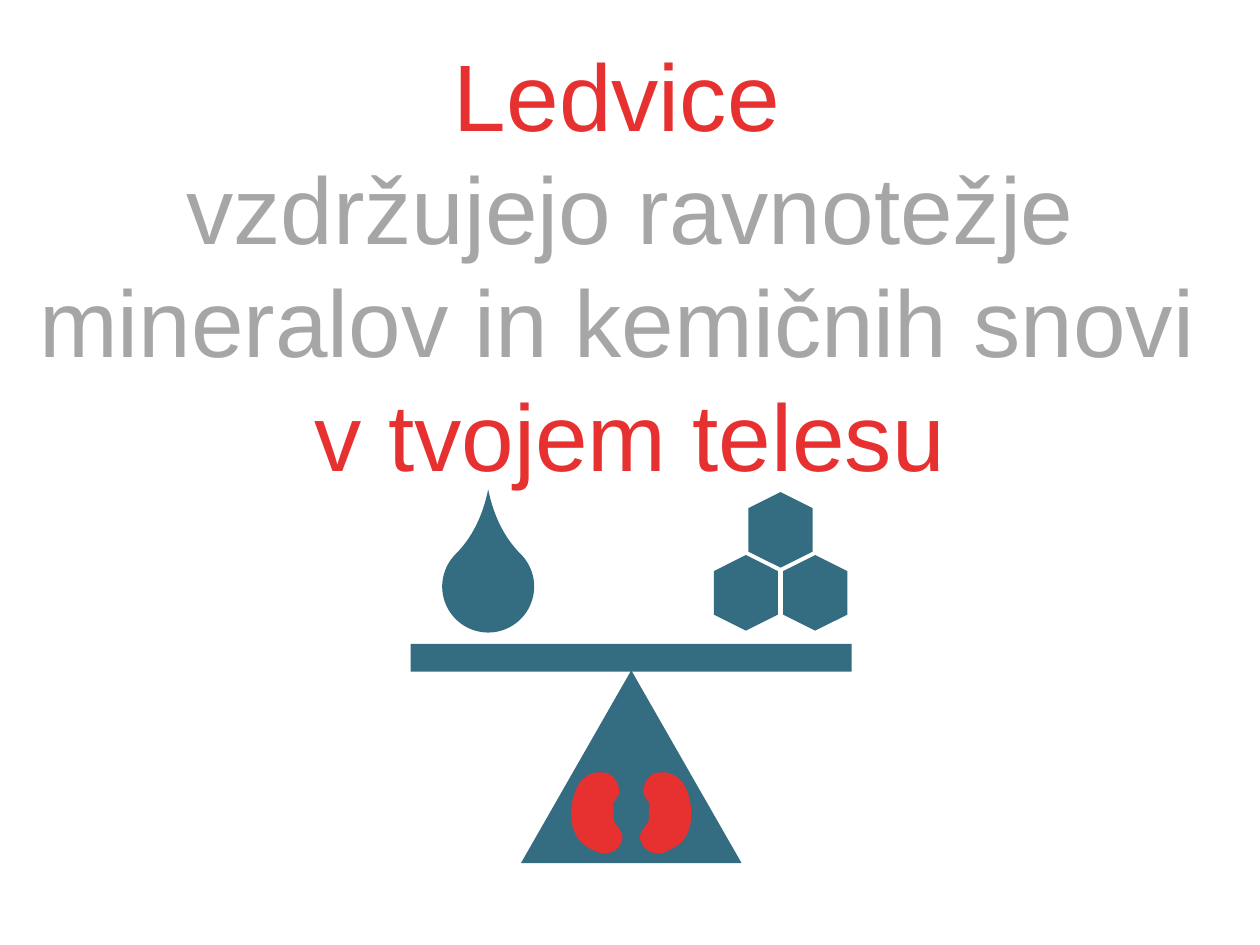
from lxml import etree
from pptx import Presentation
from pptx import util as u
from pptx.dml.color import RGBColor
from pptx.enum import shapes, text
from pptx.oxml import ns

RED, GREY, TEAL = "E63130", "A6A6A6", "346C81"

# Kidney outline on a 45 x 67 grid: a start point, then Bezier triples.
KIDNEY_GRID = (45, 67)
KIDNEY = [
    (37, 33),
    (37, 31), (37, 29), (37, 28),
    (36, 27), (36, 26), (37, 25),
    (38, 23), (39, 22), (41, 19),
    (42, 16), (41, 11), (40, 10),
    (37, 3), (32, 1), (28, 1),
    (18, 0), (10, 7), (7, 15),
    (0, 33), (3, 53), (16, 60),
    (24, 65), (29, 67), (36, 64),
    (39, 63), (45, 57), (44, 51),
    (43, 48), (42, 47), (41, 45),
    (40, 43), (38, 42), (38, 41),
    (37, 40), (37, 39), (37, 33),
]


def colour(value):
    return RGBColor.from_string(value)


def paint(shape, fill):
    shape.shadow.inherit = False
    shape.fill.solid()
    shape.fill.fore_color.rgb = colour(fill)
    shape.line.fill.background()


def add_preset(parts, kind, box, fill, rotation=0):
    shape = parts.add_shape(kind, *map(u.Inches, box))
    shape.rotation = rotation
    paint(shape, fill)
    return shape


def add_outline(parts, points, box, fill):
    """Draw a closed outline whose points are shares of the box."""
    left, top, width, height = box
    places = [(u.Inches(left + x * width), u.Inches(top + y * height))
              for x, y in points]
    builder = parts.build_freeform(*places[0])
    builder.add_line_segments(places[1:], close=True)
    outline = builder.convert_to_shape()
    paint(outline, fill)
    return outline


def bend(outline):
    """Turn each three line segments into one Bezier curve."""
    segments = list(outline.element.iter(ns.qn("a:lnTo")))
    for first in range(0, len(segments) - 2, 3):
        curve = etree.Element(ns.qn("a:cubicBezTo"))
        segments[first].addprevious(curve)
        for segment in segments[first:first + 3]:
            curve.append(segment[0])
            segment.getparent().remove(segment)


def write_title(page, box):
    title = page.shapes.title
    for name, value in zip(("left", "top", "width", "height"), box):
        setattr(title, name, u.Inches(value))
    frame = title.text_frame
    frame_format = {"word_wrap": True,
                    "auto_size": text.MSO_AUTO_SIZE.SHAPE_TO_FIT_TEXT,
                    "vertical_anchor": text.MSO_ANCHOR.TOP}
    for name, value in frame_format.items():
        setattr(frame, name, value)
    lines = [
        [("Ledvice ", RED),
         ("vzdržujejo ravnotežje mineralov in kemičnih snovi ", GREY)],
        [("v tvojem telesu", RED)],
    ]
    for number, spans in enumerate(lines):
        para = frame.add_paragraph() if number else frame.paragraphs[0]
        para.alignment = text.PP_ALIGN.CENTER
        para.space_before = u.Pt(0)
        for position, (words, tint) in enumerate(spans):
            if position:
                para.add_line_break()
            span = para.add_run()
            span.text = words
            for name, value in {"name": "Arial", "size": u.Pt(54)}.items():
                setattr(span.font, name, value)
            span.font.color.rgb = colour(tint)


def draw_scale(page, box):
    """Draw the beam on its triangular foot, with a pair of kidneys."""
    left, top, width, height = box
    parts = page.shapes.add_group_shape().shapes
    beam = 0.22
    foot_width, foot_height = width / 2, height - beam + 0.01
    middle = left + width / 2
    add_outline(parts, [(0.5, 0), (0, 1), (1, 1)],
                (middle - foot_width / 2, top + height - foot_height,
                 foot_width, foot_height), TEAL)
    add_preset(parts, shapes.MSO_SHAPE.RECTANGLE,
               (left, top, width, beam), TEAL)
    kidney_width, kidney_height, gap = 0.45, 0.67, 0.12
    kidney_top = top + height - kidney_height - 0.06
    columns, rows = KIDNEY_GRID
    kidney = [(x / columns, y / rows) for x, y in KIDNEY]
    mirrored = [(1 - x, y) for x, y in kidney]
    for points, x in ((kidney, middle - gap / 2 - kidney_width),
                      (mirrored, middle + gap / 2)):
        bend(add_outline(parts, points,
                         (x, kidney_top, kidney_width, kidney_height), RED))


def draw_drop(page, box):
    drop = add_preset(page.shapes, shapes.MSO_SHAPE.TEAR, box, TEAL, 315)
    drop.adjustments[0] = 1.493


def draw_hexagons(page, box):
    """Stack three upright hexagons: one over two."""
    left, top, width, height = box
    parts = page.shapes.add_group_shape().shapes
    cell_width, cell_height = 0.6, 0.51
    step_x, step_y = (width - cell_width) / 2, height - cell_height
    for column, row in ((0, 1), (1, 0), (2, 1)):
        add_preset(parts, shapes.MSO_SHAPE.HEXAGON,
                   (left + column * step_x, top + row * step_y,
                    cell_width, cell_height), TEAL, 270)


def main():
    deck = Presentation()
    deck.slide_width, deck.slide_height = u.Inches(10), u.Inches(7.5)
    page = deck.slides.add_slide(deck.slide_layouts[5])
    write_title(page, (0, 0.24, 10, 3.74))
    draw_scale(page, (3.26, 5.11, 3.5, 1.74))
    draw_drop(page, (3.51, 4.29, 0.73, 0.73))
    draw_hexagons(page, (5.62, 3.95, 1.15, 1.01))
    deck.save("out.pptx")


if __name__ == "__main__":
    main()
